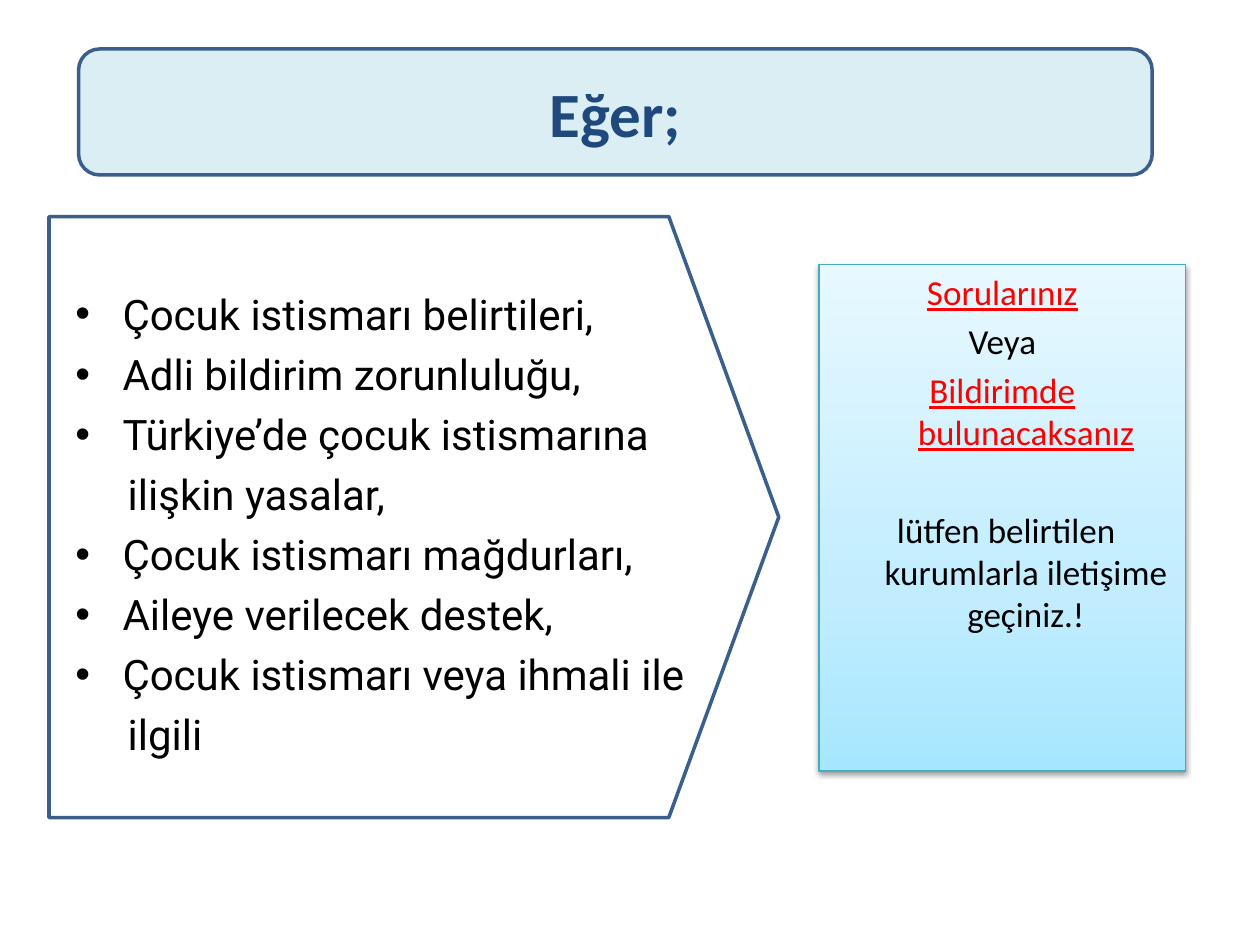
from copy import deepcopy
from pptx import Presentation
from pptx.dml.color import RGBColor
from pptx.enum.shapes import MSO_SHAPE as Kind
from pptx.enum.text import MSO_ANCHOR as Anchor, PP_ALIGN as Align
from pptx.oxml.ns import qn
from pptx.util import Pt
from lxml.etree import SubElement as Sub

EDGE, NAVY, RED, BLACK = "3A5F8C", "1F497D", "FF0000", "000000"
HANG = 27
TITLE = dict(name="Calibri", size=Pt(36), bold=True)
LIST = dict(name="Roboto", size=Pt(24))
NOTE = dict(name="Calibri", size=Pt(20))

# Topic and, where it runs on, its second line
TOPICS = [
    ("Çocuk istismarı belirtileri,",),
    ("Adli bildirim zorunluluğu,",),
    ("Türkiye’de çocuk istismarına", "ilişkin yasalar,"),
    ("Çocuk istismarı mağdurları,",),
    ("Aileye verilecek destek,",),
    ("Çocuk istismarı veya ihmali ile", "ilgili"),
]
# Text, whether it is stressed, space before
LINES = [
    ("Sorularınız", True, 4),
    ("Veya", False, 4),
    ("Bildirimde bulunacaksanız", True, 4),
    (" lütfen belirtilen kurumlarla iletişime geçiniz.!", False, 32),
]


def rgb(code):
    return RGBColor.from_string(code)


def panel(slide, kind, box, fill=None, edge=EDGE, width=2):
    shape = slide.shapes.add_shape(kind, *map(Pt, box))
    shape.shadow.inherit = False
    if fill:
        shape.fill.solid()
        shape.fill.fore_color.rgb = rgb(fill)
    else:
        shape.fill.background()
    shape.line.color.rgb = rgb(edge)
    shape.line.width = Pt(width)
    shape.text_frame.word_wrap = True
    return shape


def write(frame, text, look, color, align, left=0, first=0, gap=0):
    para = frame.paragraphs[0]
    if para.runs:
        para = frame.add_paragraph()
    para.alignment = align
    para.space_before = Pt(gap)
    props = para._p.get_or_add_pPr()
    props.set("marL", str(Pt(left)))
    props.set("indent", str(Pt(first)))
    run = para.add_run()
    run.text = text
    run.font.color.rgb = rgb(color)
    for key, value in look.items():
        setattr(run.font, key, value)
    return props


def title(slide, box):
    shape = panel(slide, Kind.ROUNDED_RECTANGLE, box, "DBEEF4")
    shape.text_frame.vertical_anchor = Anchor.MIDDLE
    write(shape.text_frame, "Eğer;", TITLE, NAVY, Align.CENTER)


def topics(slide, box):
    shape = panel(slide, Kind.PENTAGON, box)
    shape.adjustments[0] = 0.183
    frame = shape.text_frame
    frame.vertical_anchor = Anchor.TOP
    frame.margin_left, frame.margin_top, frame.margin_right = Pt(15), Pt(41), 0
    for head, *rest in TOPICS:
        props = write(frame, head, LIST, BLACK, Align.LEFT, HANG, -HANG, 5.5)
        Sub(props, qn("a:buFont"), typeface="Arial")
        Sub(props, qn("a:buChar"), char="•")
        for text in rest:
            write(frame, text, LIST, BLACK, Align.LEFT, HANG + 3, 0, 5.5)


def shade(shape, stops):
    # Gradient running upward
    fill = shape.fill
    fill.gradient()
    fill.gradient_angle = 90
    group = shape._element.spPr.find(".//" + qn("a:gsLst"))
    group.append(deepcopy(group[0]))
    for stop, (place, code) in zip(fill.gradient_stops, stops):
        stop.position = place
        stop.color.rgb = rgb(code)

    # Soft shadow below
    effect = shape._element.spPr.find(qn("a:effectLst"))
    drop = Sub(effect, qn("a:outerShdw"), blurRad=str(Pt(3.1)),
               dist=str(Pt(1.6)), dir="5400000", rotWithShape="0")
    tone = Sub(drop, qn("a:srgbClr"), val=BLACK)
    Sub(tone, qn("a:alpha"), val="38000")


def note(slide, box):
    shape = panel(slide, Kind.RECTANGLE, box, edge="46AAC5", width=0.75)
    shade(shape, [(0, "A7E6FF"), (0.35, "C1EDFF"), (1, "E7F8FF")])
    frame = shape.text_frame
    frame.vertical_anchor = Anchor.TOP
    for text, stress, gap in LINES:
        write(frame, text, dict(NOTE, underline=stress),
              RED if stress else BLACK, Align.CENTER, HANG, -HANG, gap)


def main():
    deck = Presentation()
    deck.slide_width, deck.slide_height = Pt(720), Pt(540)
    slide = deck.slides.add_slide(deck.slide_layouts[6])
    title(slide, (44.9, 28, 613.5, 72))
    topics(slide, (28, 123.8, 417, 343.4))
    note(slide, (468, 151.2, 209.5, 289.4))
    deck.save("out.pptx")


if __name__ == "__main__":
    main()
